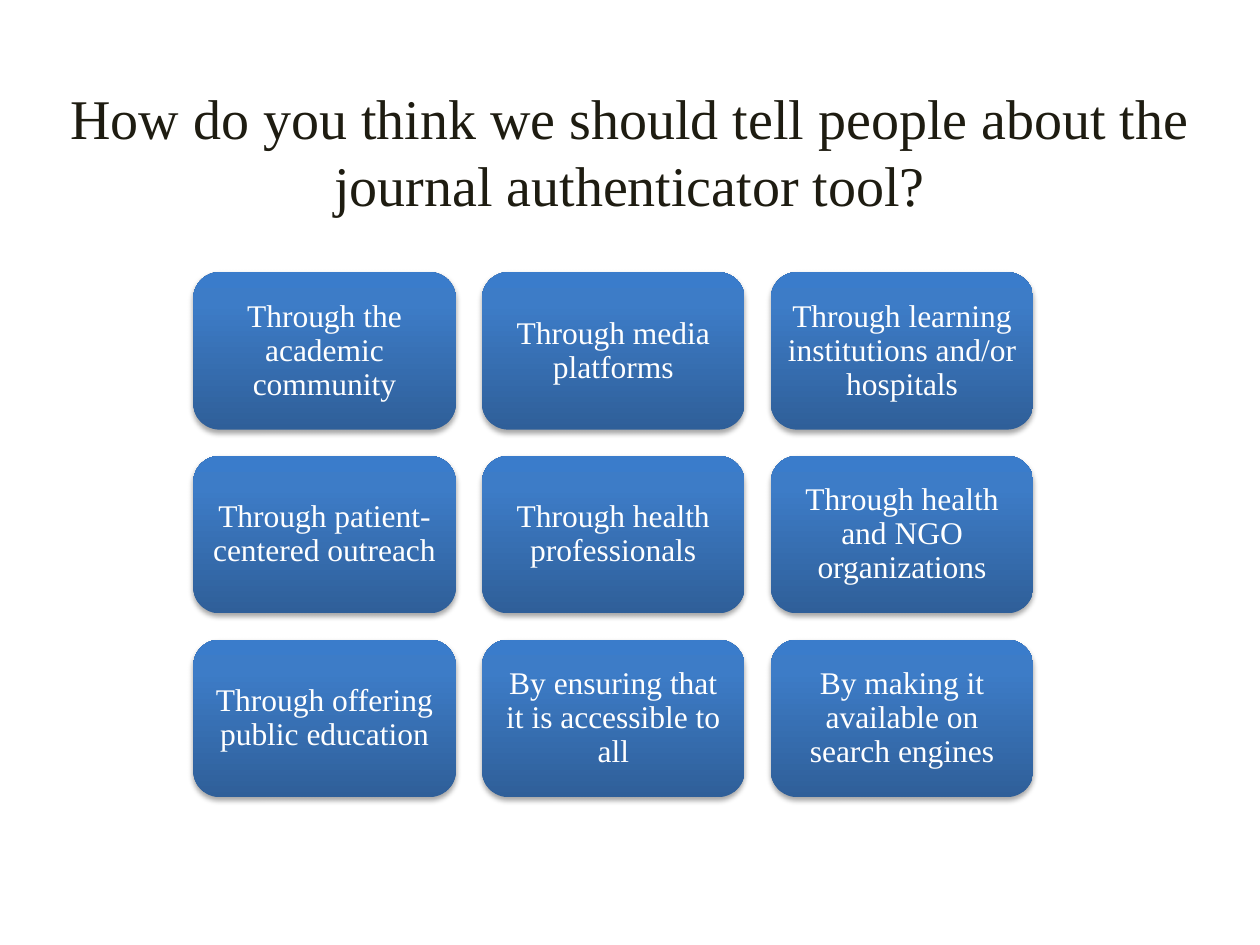
from lxml.etree import fromstring
from pptx import Presentation
from pptx.dml.color import RGBColor
from pptx.enum.shapes import MSO_SHAPE as Shape
from pptx.enum.text import MSO_ANCHOR as Anchor, MSO_AUTO_SIZE as AutoSize, PP_ALIGN as Align
from pptx.oxml.ns import nsdecls
from pptx.util import Pt

COLORS = {
    "title": "1E1C11",
    "card_text": "FFFFFF",
    "card_bottom": "2F5F99",
    "card_upper": "3D7CC7",
    "card_top": "3A7CCB",
    "shadow": "000000",
}
FONT = "Times New Roman"

CARD_GRADIENT = f"""<a:gradFill {nsdecls("a")} rotWithShape="1"><a:gsLst>
<a:gs pos="0"><a:srgbClr val="{COLORS['card_bottom']}"/></a:gs>
<a:gs pos="80000"><a:srgbClr val="{COLORS['card_upper']}"/></a:gs>
<a:gs pos="100000"><a:srgbClr val="{COLORS['card_top']}"/></a:gs>
</a:gsLst><a:lin ang="16200000" scaled="0"/></a:gradFill>"""
CARD_SHADOW = f"""<a:effectLst {nsdecls("a")}>
<a:outerShdw blurRad="{Pt(3.1)}" dist="{Pt(1.8)}" dir="5400000" rotWithShape="0">
<a:srgbClr val="{COLORS['shadow']}"><a:alpha val="35000"/></a:srgbClr>
</a:outerShdw></a:effectLst>"""

CARD_ROWS = [
    ["Through the academic community", "Through media platforms",
     "Through learning institutions and/or hospitals"],
    ["Through patient-centered outreach", "Through health professionals",
     "Through health and NGO organizations"],
    ["Through offering public education", "By ensuring that it is accessible to all",
     "By making it available on search engines"],
]
LEFT, TOP = 110.5, 155.5
CARD_WIDTH, CARD_HEIGHT, GAP = 150, 90, 15


def write_text(shape, text, size, color, frame_format):
    frame = shape.text_frame
    frame.text = text
    for name, value in frame_format.items():
        setattr(frame, name, value)
    paragraph = frame.paragraphs[0]
    paragraph.alignment = Align.CENTER
    paragraph.space_before = Pt(0)
    font = paragraph.runs[0].font
    for name, value in {"name": FONT, "size": Pt(size), "bold": False}.items():
        setattr(font, name, value)
    font.color.rgb = RGBColor.from_string(COLORS[color])
    return paragraph


presentation = Presentation()
presentation.slide_width, presentation.slide_height = Pt(720), Pt(540)
slide = presentation.slides.add_slide(presentation.slide_layouts[5])

title = slide.shapes.title
title_place = {"left": Pt(31), "top": Pt(44), "width": Pt(658), "height": Pt(73.5)}
for name, value in title_place.items():
    setattr(title, name, value)
write_text(
    title,
    "How do you think we should tell people about the journal authenticator tool?",
    32, "title",
    {"vertical_anchor": Anchor.TOP, "word_wrap": True, "auto_size": AutoSize.NONE},
)

card_format = {"vertical_anchor": Anchor.MIDDLE, "word_wrap": True}
for side in ("left", "top", "right", "bottom"):
    card_format[f"margin_{side}"] = Pt(5)

for row, labels in enumerate(CARD_ROWS):
    for column, label in enumerate(labels):
        card = slide.shapes.add_shape(
            Shape.FLOWCHART_ALTERNATE_PROCESS,
            Pt(LEFT + column * (CARD_WIDTH + GAP)),
            Pt(TOP + row * (CARD_HEIGHT + GAP)),
            Pt(CARD_WIDTH), Pt(CARD_HEIGHT),
        )
        properties = card.element.spPr
        properties.append(fromstring(CARD_GRADIENT))
        card.line.fill.background()
        properties.append(fromstring(CARD_SHADOW))
        paragraph = write_text(card, label, 18, "card_text", card_format)
        paragraph.line_spacing = 0.9

presentation.save("out.pptx")
